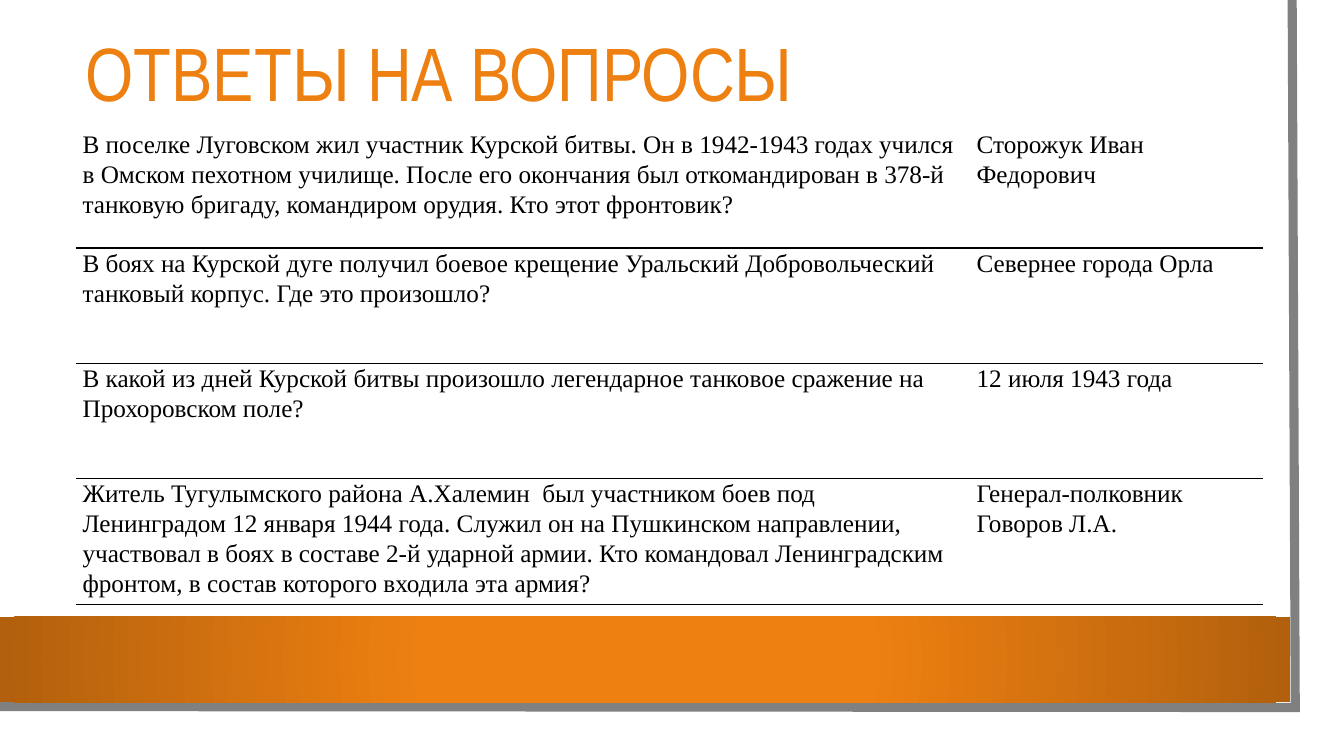
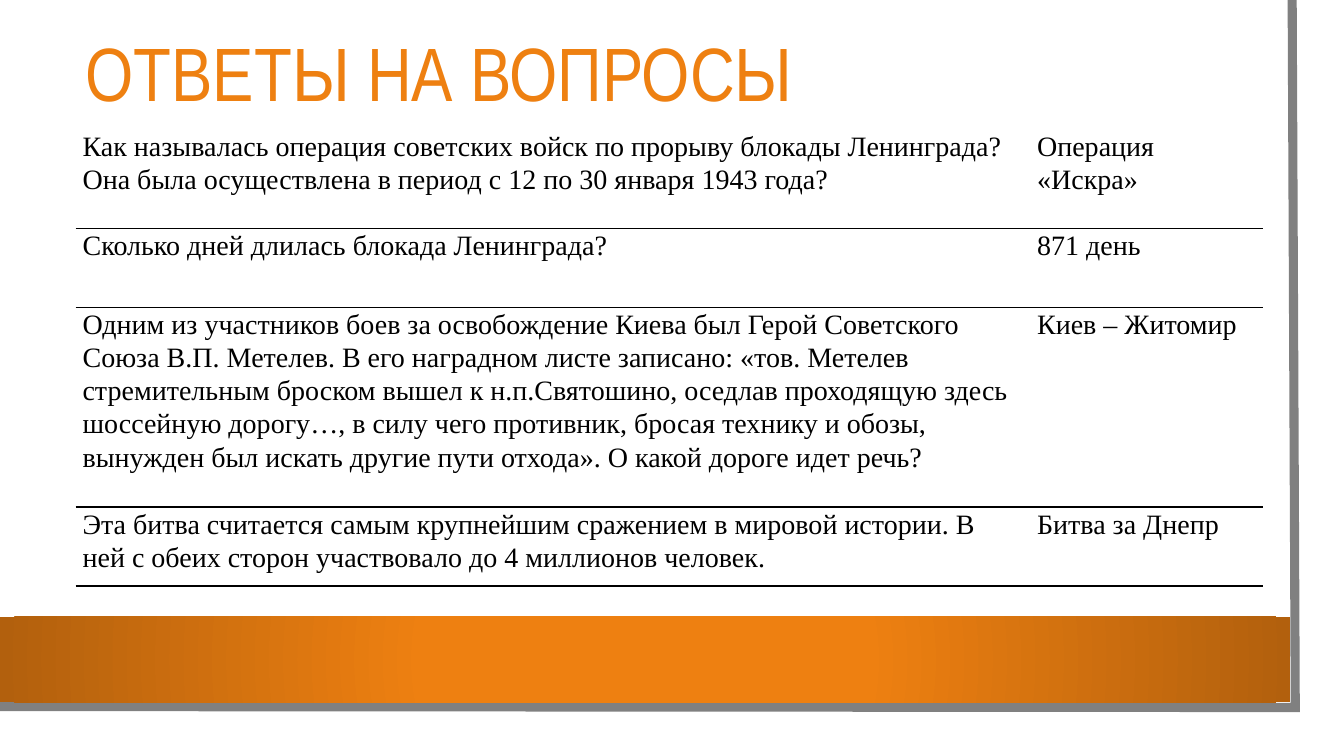
from lxml.etree import SubElement
from pptx import Presentation
from pptx.dml.color import RGBColor
from pptx.enum.shapes import MSO_SHAPE as Shape
from pptx.enum.text import MSO_ANCHOR as Anchor, MSO_AUTO_SIZE as AutoSize, PP_ALIGN as Align
from pptx.oxml import parse_xml
from pptx.oxml.ns import nsdecls, qn
from pptx.util import Pt

ORANGE, DARK_ORANGE, GREY = "EE8011", "B2600D", "808080"
BLACK, WHITE = "000000", "FFFFFF"
NO_STYLE_NO_GRID = "{2D5ABB26-0587-4C30-8999-92F81FD0307C}"


def color(value):
    return RGBColor.from_string(value)


def points(*values):
    return [Pt(value) for value in values]


def apply(target, values):
    for name, value in values.items():
        setattr(target, name, value)


class Deck:
    title_font = {"name": "Arial Narrow", "size": Pt(54), "bold": False}
    cell_font = {"name": "Times New Roman"}
    cell_margins = {"margin_left": Pt(5), "margin_right": Pt(5),
                    "margin_top": 0, "margin_bottom": 0}

    def __init__(self):
        self.presentation = Presentation()
        apply(self.presentation, {"slide_width": Pt(960), "slide_height": Pt(540)})
        self.layout = self.presentation.slide_layouts[5]
        self.slide = None

    def add_slide(self, title):
        first = self.slide is None
        self.slide = self.presentation.slides.add_slide(self.layout)
        if first:
            self.move_to_layout([self.panel(), self.frame(), self.band()])
        self.title(title)

    def move_to_layout(self, shapes):
        """Put the shared decoration behind everything on the layout."""
        tree = self.layout.shapes[0].element.getparent()
        for position, shape in enumerate(shapes, start=2):
            tree.insert(position, shape.element)

    def rectangle(self, *box):
        shape = self.slide.shapes.add_shape(Shape.RECTANGLE, *points(*box))
        shape.shadow.inherit = False
        shape.line.fill.background()
        return shape

    def panel(self):
        shape = self.rectangle(0, 0, 943.2, 523.4)
        shape.fill.solid()
        shape.fill.fore_color.rgb = color(WHITE)
        return shape

    def frame(self):
        builder = self.slide.shapes.build_freeform(*points(923, 0))
        builder.add_line_segments([points(925.2, 505.4), points(-2.2, 504.7)], close=False)
        shape = builder.convert_to_shape()
        shape.shadow.inherit = False
        shape.fill.background()
        shape.line.color.rgb = color(GREY)
        shape.line.width = Pt(6.5)
        SubElement(shape.element.spPr.find(qn("a:ln")), qn("a:miter"), lim="800000")
        return shape

    def band(self):
        shape = self.rectangle(0, 440.6, 921.6, 61.2)
        # Radial gradient from the centre
        stops = "".join(
            f'<a:gs pos="{position}"><a:srgbClr val="{value}"/></a:gs>'
            for position, value in ((34000, ORANGE), (100000, DARK_ORANGE)))
        gradient = parse_xml(
            f'<a:gradFill {nsdecls("a")} rotWithShape="1"><a:gsLst>{stops}</a:gsLst>'
            '<a:path path="circle"><a:fillToRect l="50000" t="50000" r="50000" b="50000"/>'
            '</a:path></a:gradFill>')
        shape.element.spPr.find(qn("a:prstGeom")).addnext(gradient)
        return shape

    def title(self, text):
        shape = self.slide.shapes.title
        left, top, width, height = points(54, 9.4, 818.6, 90.7)
        apply(shape, {"left": left, "top": top, "width": width, "height": height})
        apply(shape.text_frame, {"text": text, "word_wrap": True,
                                 "auto_size": AutoSize.NONE,
                                 "vertical_anchor": Anchor.MIDDLE})
        paragraph = shape.text_frame.paragraphs[0]
        apply(paragraph, {"alignment": Align.LEFT, "line_spacing": 0.9})
        apply(paragraph.font, self.title_font)
        paragraph.font.color.rgb = color(ORANGE)

    def answers(self, rows, widths, heights, size):
        frame = self.slide.shapes.add_table(
            len(rows), len(widths), *points(54, 92.2, sum(widths), sum(heights)))
        frame.element.find(".//" + qn("a:tableStyleId")).text = NO_STYLE_NO_GRID
        table = frame.table
        apply(table, {"first_row": False, "horz_banding": False})
        for column, width in zip(table.columns, widths):
            column.width = Pt(width)
        for row, height, texts in zip(table.rows, heights, rows):
            row.height = Pt(height)
            for cell, text in zip(row.cells, texts):
                self.cell(cell, text, size)

    def cell(self, cell, text, size):
        apply(cell, {"text": text, **self.cell_margins})
        cell.fill.background()
        border = parse_xml(
            f'<a:lnB {nsdecls("a")} w="{Pt(1)}"><a:solidFill>'
            f'<a:srgbClr val="{BLACK}"/></a:solidFill></a:lnB>')
        cell.fill._xPr.insert(0, border)
        for paragraph in cell.text_frame.paragraphs:
            paragraph.line_spacing = 1.07
            apply(paragraph.font, {"size": Pt(size), **self.cell_font})
            paragraph.font.color.rgb = color(BLACK)


FRONT_ANSWERS = [
    ("В поселке Луговском жил участник Курской битвы. Он в 1942-1943 годах учился "
     "в Омском пехотном училище. После его окончания был откомандирован в 378-й "
     "танковую бригаду, командиром орудия. Кто этот фронтовик?",
     "Сторожук Иван Федорович"),
    ("В боях на Курской дуге получил боевое крещение Уральский Добровольческий "
     "танковый корпус. Где это произошло?",
     "Севернее города Орла"),
    ("В какой из дней Курской битвы произошло легендарное танковое сражение на "
     "Прохоровском поле?",
     "12 июля 1943 года"),
    ("Житель Тугулымского района А.Халемин  был участником боев под Ленинградом "
     "12 января 1944 года. Служил он на Пушкинском направлении, участвовал в боях "
     "в составе 2-й ударной армии. Кто командовал Ленинградским фронтом, в состав "
     "которого входила эта армия?",
     "Генерал-полковник\nГоворов Л.А."),
]

BATTLE_ANSWERS = [
    ("Как называлась операция советских войск по прорыву блокады Ленинграда? Она "
     "была осуществлена в период с 12 по 30 января 1943 года?",
     "Операция «Искра»"),
    ("Сколько дней длилась блокада Ленинграда?", "871 день"),
    ("Одним из участников боев за освобождение Киева был Герой Советского Союза "
     "В.П. Метелев. В его наградном листе записано: «тов. Метелев стремительным "
     "броском вышел к н.п.Святошино, оседлав проходящую здесь шоссейную дорогу…, "
     "в силу чего противник, бросая технику и обозы, вынужден был искать другие "
     "пути отхода». О какой дороге идет речь?",
     "Киев – Житомир"),
    ("Эта битва считается самым крупнейшим сражением в мировой истории. В ней с "
     "обеих сторон участвовало до 4 миллионов человек.",
     "Битва за Днепр"),
]


def main():
    deck = Deck()
    # Rows, column widths, row heights, text size
    for table in (
        (FRONT_ANSWERS, (638.6, 209.5), (85, 82.2, 82.2, 90), 18),
        (BATTLE_ANSWERS, (681.8, 166.3), (70.8, 56.4, 142.8, 56.4), 20),
    ):
        deck.add_slide("ОТВЕТЫ НА ВОПРОСЫ")
        deck.answers(*table)
    deck.presentation.save("out.pptx")


if __name__ == "__main__":
    main()
